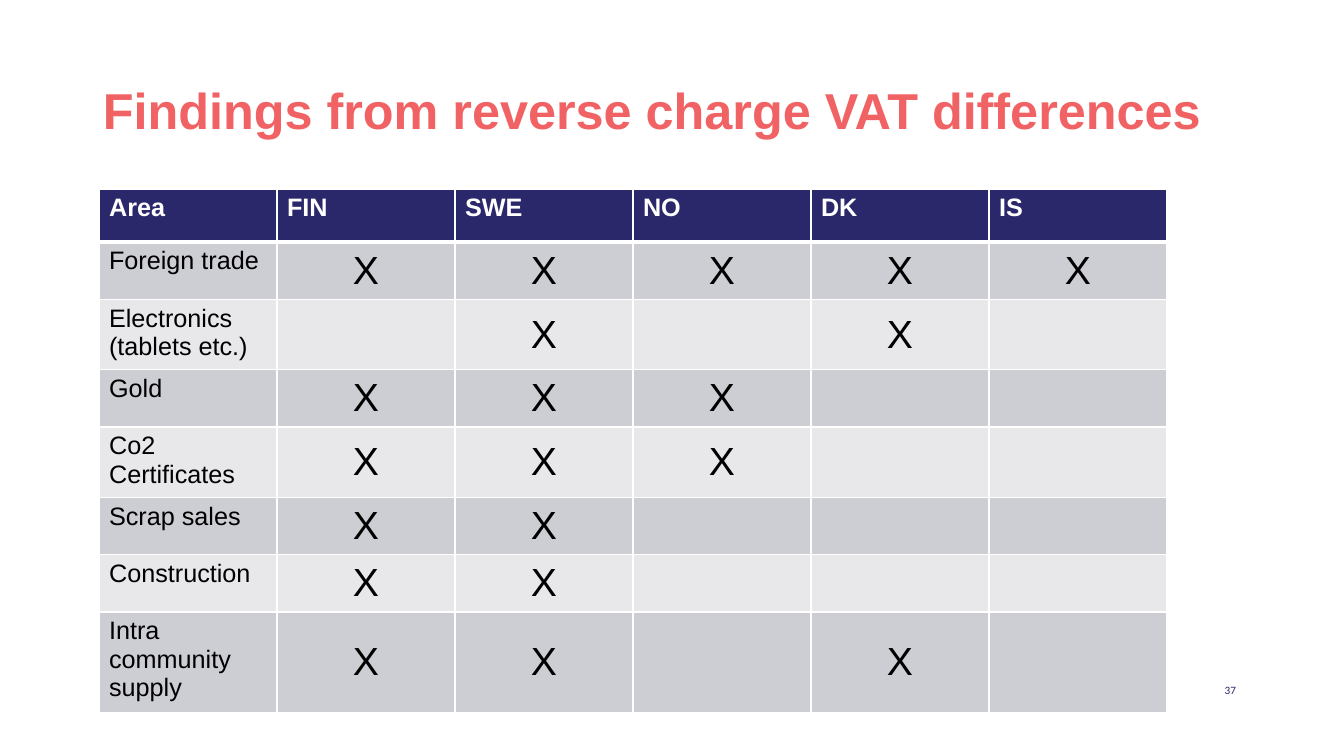
from lxml import etree
from pptx import Presentation
from pptx.dml.color import RGBColor
from pptx.enum.text import MSO_ANCHOR, PP_ALIGN
from pptx.oxml.ns import qn
from pptx.util import Pt

# Content
TITLE = "Findings from reverse charge VAT differences"
PAGE_NUMBER = "37"
COUNTRIES = ["FIN", "SWE", "NO", "DK", "IS"]
AREAS = [
    ("Foreign trade", ["FIN", "SWE", "NO", "DK", "IS"]),
    ("Electronics (tablets etc.)", ["SWE", "DK"]),
    ("Gold", ["FIN", "SWE", "NO"]),
    ("Co2 Certificates", ["FIN", "SWE", "NO"]),
    ("Scrap sales", ["FIN", "SWE"]),
    ("Construction", ["FIN", "SWE"]),
    ("Intra community supply", ["FIN", "SWE", "DK"]),
]

# Style
NAVY = RGBColor(0x2B, 0x27, 0x6B)
PAGE_NAVY = RGBColor(0x2C, 0x28, 0x6C)
CORAL = RGBColor(0xF1, 0x62, 0x64)
DARK_BAND = RGBColor(0xCD, 0xCD, 0xD4)
LIGHT_BAND = RGBColor(0xE8, 0xE8, 0xEB)
WHITE = RGBColor(0xFF, 0xFF, 0xFF)
BLACK = RGBColor(0, 0, 0)
LEFT, CENTER, RIGHT = PP_ALIGN.LEFT, PP_ALIGN.CENTER, PP_ALIGN.RIGHT
TOP, MIDDLE = MSO_ANCHOR.TOP, MSO_ANCHOR.MIDDLE

# Geometry in px
EMU_PER_PX = 914400 / 100.8
SLIDE_SIZE = (1344, 756)
TITLE_BOX = (93, 49, 1159, 129)
PAGE_BOX = (1157, 683, 89, 14)
TABLE_LEFT, TABLE_TOP = 99, 189
COLUMN_WIDTH, ROW_HEIGHT = 178, 53


def px(length):
    return round(length * EMU_PER_PX)


def write(paragraph, text, size, color, bold=False, align=LEFT, font="Arial"):
    paragraph.alignment = align
    run = paragraph.add_run()
    run.text = text
    run.font.name = font
    run.font.size = Pt(size)
    run.font.bold = bold
    run.font.color.rgb = color


def add_text(slide, box, text, size, color, **style):
    shape = slide.shapes.add_textbox(*map(px, box))
    frame = shape.text_frame
    frame.word_wrap = True
    frame.vertical_anchor = MIDDLE
    write(frame.paragraphs[0], text, size, color, **style)
    return frame.paragraphs[0]


def set_borders(cell, top, bottom):
    properties = cell._tc.get_or_add_tcPr()
    for side, width in (("L", 1), ("R", 1), ("T", top), ("B", bottom)):
        line = etree.SubElement(properties, qn(f"a:ln{side}"), w=str(Pt(width)))
        fill = etree.SubElement(line, qn("a:solidFill"))
        etree.SubElement(fill, qn("a:srgbClr"), val=str(WHITE))


def add_findings_table(slide):
    rows = [["Area"] + COUNTRIES]
    for area, marked in AREAS:
        rows.append([area] + ["X" if country in marked else "" for country in COUNTRIES])
    row_count, column_count = len(rows), len(rows[0])
    table = slide.shapes.add_table(
        row_count, column_count, px(TABLE_LEFT), px(TABLE_TOP),
        px(COLUMN_WIDTH * column_count), px(ROW_HEIGHT * row_count)).table
    table.horz_banding = False

    for row_index, row in enumerate(rows):
        is_header = row_index == 0
        band = NAVY if is_header else DARK_BAND if row_index % 2 else LIGHT_BAND
        for column_index, text in enumerate(row):
            cell = table.cell(row_index, column_index)
            set_borders(cell, 3 if row_index == 1 else 1, 3 if is_header else 1)
            cell.fill.solid()
            cell.fill.fore_color.rgb = band
            is_mark = not is_header and column_index > 0
            cell.vertical_anchor = MIDDLE if is_mark else TOP
            if text:
                write(cell.text_frame.paragraphs[0], text, 28 if is_mark else 18,
                      WHITE if is_header else BLACK, bold=is_header,
                      align=CENTER if is_mark else LEFT)


def main():
    presentation = Presentation()
    presentation.slide_width, presentation.slide_height = map(px, SLIDE_SIZE)
    slide = presentation.slides.add_slide(presentation.slide_layouts[6])

    # Title, table and page number
    title = add_text(slide, TITLE_BOX, TITLE, 36, CORAL, bold=True)
    title.line_spacing = 0.9
    add_findings_table(slide)
    add_text(slide, PAGE_BOX, PAGE_NUMBER, 8, PAGE_NAVY, align=RIGHT, font="Calibri")

    presentation.save("out.pptx")


if __name__ == "__main__":
    main()
